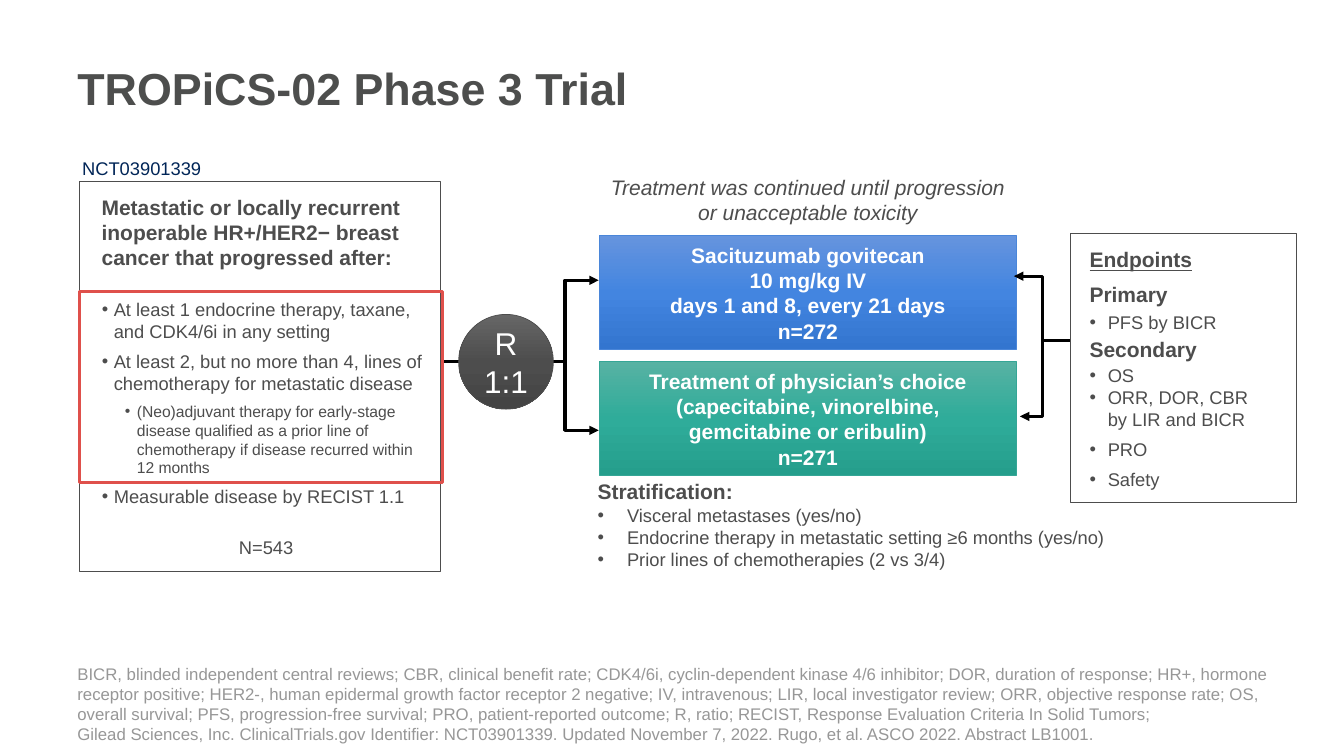
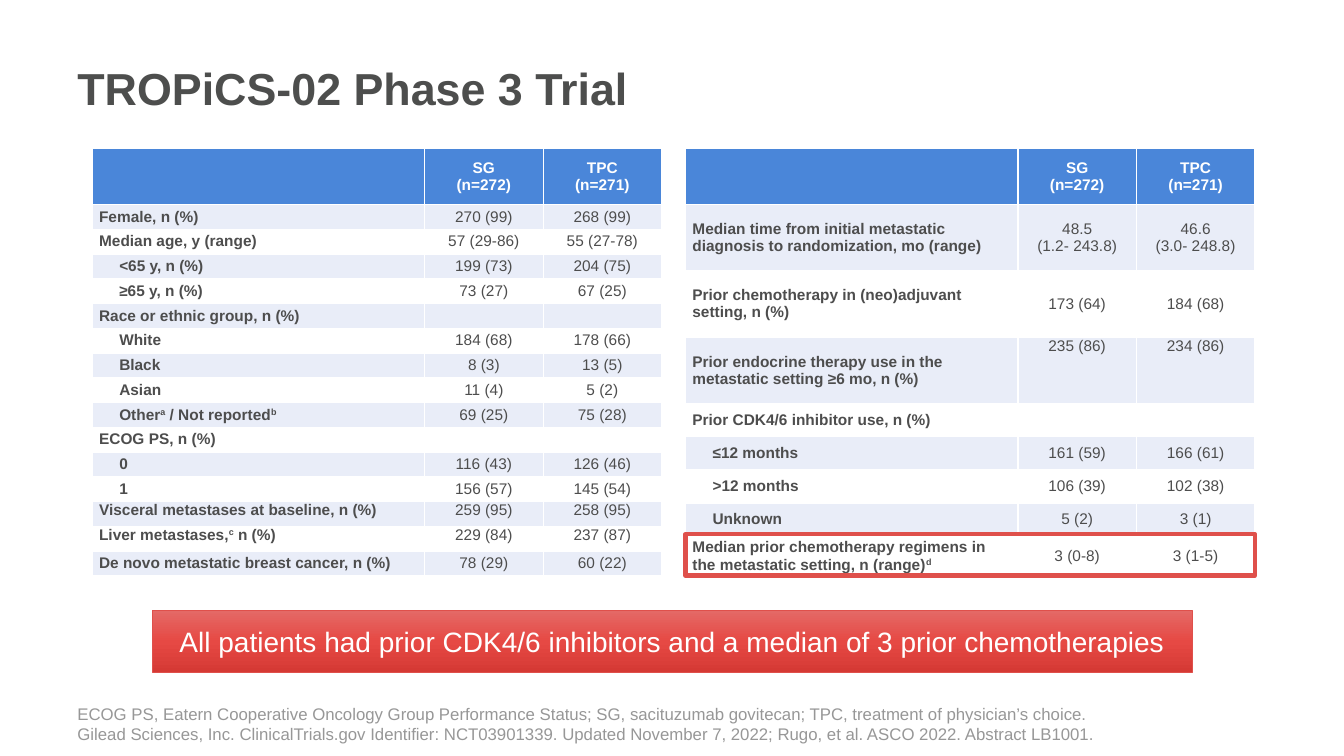
from collections import namedtuple
from copy import deepcopy
from dataclasses import dataclass

from lxml.etree import SubElement
from pptx import Presentation
from pptx.dml.color import RGBColor
from pptx.enum.shapes import MSO_CONNECTOR as Connector, MSO_SHAPE as Preset
from pptx.enum.text import MSO_ANCHOR as Anchor, PP_ALIGN as Align
from pptx.oxml.ns import qn
from pptx.util import Pt

COLORS = {
    "title": "4D4E4D", "text": "4D4D4D", "footer": "979797", "navy": "002557",
    "white": "FFFFFF", "black": "000000", "band": "E9EDF8",
    "blue": "4A86D9", "green": "35A696", "red": "DF504B",
}
GRADIENTS = {
    "blue": ("6594DE", "4385E0", "3375CF"),
    "green": ("57B2A3", "2FAC9A", "259E8C"),
    "red": ("E46966", "E64944", "D53934"),
    "text": ("666666", "4D4D4D", "444444"),
}
FONT = "Arial"
HEADING, BODY, SMALL, CELL = 15, 13.1, 11.2, 11
INSETS = (7.2, 3.6, 7.2, 3.6)
TITLE = "TROPiCS-02 Phase 3 Trial"

Box = namedtuple("Box", "x y w h")


@dataclass
class Para:
    """One paragraph; newlines break lines and ^ marks switch superscript on and off."""
    text: str
    size: float = BODY
    color: str = "text"
    bold: bool = False
    italic: bool = False
    underline: bool = False
    align: Align = Align.LEFT
    before: float = 0
    after: float = 0
    indent: float = 0
    hang: float = 0
    line_spacing: float = 1.0


@dataclass
class Row:
    label: str
    sg: str = ""
    tpc: str = ""
    indent: float = 0
    top_columns: tuple = ()
    height: float = 17.7


def rgb(name):
    return RGBColor.from_string(COLORS[name])


def points(box):
    return [Pt(length) for length in box]


def add_run(paragraph, text, para, superscript):
    run = paragraph.add_run()
    run.text = text
    font = run.font
    font.name, font.size = FONT, Pt(para.size)
    font.bold, font.italic, font.underline = para.bold, para.italic, para.underline
    font.color.rgb = rgb(para.color)
    if superscript:
        run._r.get_or_add_rPr().set("baseline", "30000")


def write_paragraph(paragraph, para):
    paragraph.alignment = para.align
    paragraph.space_before, paragraph.space_after = Pt(para.before), Pt(para.after)
    paragraph.line_spacing = para.line_spacing
    properties = paragraph._p.get_or_add_pPr()
    properties.set("marL", str(Pt(para.indent)))
    properties.set("indent", str(-Pt(para.hang)))
    if para.hang:
        SubElement(properties, qn("a:buFont"), typeface=FONT)
        SubElement(properties, qn("a:buChar"), char="•")
    for line_index, line in enumerate(para.text.split("\n")):
        if line_index:
            paragraph.add_line_break()
        for index, part in enumerate(line.split("^")):
            if part:
                add_run(paragraph, part, para, index % 2 == 1)
    if not para.text:
        SubElement(paragraph._p, qn("a:endParaRPr"), sz=str(int(para.size * 100)))


def write_text(shape, paras, anchor=Anchor.TOP, insets=INSETS):
    frame = shape.text_frame
    frame.word_wrap = True
    frame.vertical_anchor = anchor
    (frame.margin_left, frame.margin_top,
     frame.margin_right, frame.margin_bottom) = points(insets)
    for index, para in enumerate(paras):
        write_paragraph(frame.add_paragraph() if index else frame.paragraphs[0], para)


def add_text(slide, box, paras, anchor=Anchor.TOP):
    write_text(slide.shapes.add_textbox(*points(box)), paras, anchor)


def add_panel(slide, box, line, width, fill=None, preset=Preset.RECTANGLE):
    shape = slide.shapes.add_shape(preset, *points(box))
    shape.shadow.inherit = False
    shape.line.color.rgb = rgb(line)
    shape.line.width = Pt(width)
    if fill:
        shape.fill.solid()
        shape.fill.fore_color.rgb = rgb(fill)
    else:
        shape.fill.background()
    return shape


def add_glossy(slide, box, color, preset=Preset.RECTANGLE):
    """Outlined shape with a three-stop vertical gradient."""
    shape = add_panel(slide, box, color, 0.5, preset=preset)
    shape.fill.gradient()
    shape.fill.gradient_angle = 270
    stop_list = shape._element.spPr.find(qn("a:gradFill")).find(qn("a:gsLst"))
    stop_list.append(deepcopy(stop_list[-1]))
    for index, (stop, value) in enumerate(zip(shape.fill.gradient_stops, GRADIENTS[color])):
        stop.color.rgb = RGBColor.from_string(value)
        stop.position = index / 2
    return shape


def add_fork(slide, start, trunk, ends):
    """Elbow arrows from one start point that turn at the vertical line x = trunk."""
    for end in ends:
        connector = slide.shapes.add_connector(Connector.ELBOW, *points(start + end))
        connector.line.color.rgb = rgb("black")
        connector.line.width = Pt(2.25)
        properties = connector._element.spPr
        guides = properties.find(qn("a:prstGeom")).find(qn("a:avLst"))
        turn = round(100000 * (trunk - start[0]) / (end[0] - start[0]))
        SubElement(guides, qn("a:gd"), name="adj1", fmla=f"val {turn}")
        SubElement(properties.find(qn("a:ln")), qn("a:tailEnd"), type="triangle")
        SubElement(properties, qn("a:effectLst"))


def add_frame_slide(presentation, footer, footer_width):
    """Blank slide with the shared title and the footer notes."""
    slide = presentation.slides.add_slide(presentation.slide_layouts[6])
    add_text(slide, Box(48.2, 15.8, 846, 93.6),
             [Para(TITLE, 32, "title", bold=True)], Anchor.MIDDLE)
    add_text(slide, Box(48.2, 500.4, footer_width, 34.6),
             [Para(line, 12, "footer") for line in footer], Anchor.BOTTOM)
    return slide


def population_panel(slide, box):
    panel = add_panel(slide, box, "text", 1, "white")
    bullet = dict(before=5.6, indent=17.3, hang=8.6)
    write_text(panel, [
        Para("Metastatic or locally recurrent inoperable HR+/HER2− breast cancer "
             "that progressed after:", HEADING, bold=True, indent=8.6),
        Para("At least 1 endocrine therapy, taxane, and CDK4/6i in any setting",
             **{**bullet, "before": 20.1}),
        Para("At least 2, but no more than 4, lines of chemotherapy for metastatic disease",
             **bullet),
        Para("(Neo)adjuvant therapy for early-stage disease qualified as a prior line of "
             "chemotherapy if disease recurred within 12 months", SMALL,
             **{**bullet, "indent": 33.8}),
        Para("Measurable disease by RECIST 1.1", **bullet),
        Para("N=543", align=Align.CENTER, before=21.2, indent=8.6),
    ], Anchor.MIDDLE)


def treatment_arms(slide, box, gap):
    arms = {
        "blue": "Sacituzumab govitecan\n10 mg/kg IV\ndays 1 and 8, every 21 days\nn=272",
        "green": "Treatment of physician’s choice\n(capecitabine, vinorelbine,\n"
                 "gemcitabine or eribulin)\nn=271",
    }
    height = (box.h - gap) / 2
    for index, (color, text) in enumerate(arms.items()):
        arm = add_glossy(slide, Box(box.x, box.y + index * (height + gap), box.w, height), color)
        write_text(arm, [Para(text, HEADING, "white", bold=True, align=Align.CENTER)],
                   Anchor.MIDDLE)
    add_text(slide, Box(box.x, box.y - 47.5, box.w, 44), [
        Para("Treatment was continued until progression or unacceptable toxicity",
             HEADING, italic=True, align=Align.CENTER)])


def endpoints_panel(slide, box):
    heading = dict(size=HEADING, bold=True, before=1.5, after=1.5)
    bullet = dict(indent=13, hang=13)
    write_text(add_panel(slide, box, "text", 0.75, "white"), [
        Para("Endpoints", HEADING, bold=True, underline=True, after=5.6),
        Para("Primary", **heading),
        Para("PFS by BICR", before=1.3, after=1.3, **bullet),
        Para("Secondary", **heading),
        Para("OS", **bullet),
        *(Para(text, after=5.6, **bullet)
          for text in ("ORR, DOR, CBR\nby LIR and BICR", "PRO", "Safety")),
    ], Anchor.MIDDLE, (13.7, 3.6, 7.2, 3.6))


def stratification_list(slide, box):
    factors = ("Visceral metastases (yes/no)",
               "Endocrine therapy in metastatic setting ≥6 months (yes/no)",
               "Prior lines of chemotherapies (2 vs 3/4)")
    add_text(slide, box, [Para("Stratification:", HEADING, bold=True),
                          *(Para(factor, indent=21, hang=21) for factor in factors)])


def design_slide(presentation):
    slide = add_frame_slide(presentation, (
        "BICR, blinded independent central reviews; CBR, clinical benefit rate; CDK4/6i, "
        "cyclin-dependent kinase 4/6 inhibitor; DOR, duration of response; HR+, hormone "
        "receptor positive; HER2-, human epidermal growth factor receptor 2 negative; IV, "
        "intravenous; LIR, local investigator review; ORR, objective response rate; OS, "
        "overall survival; PFS, progression-free survival; PRO, patient-reported outcome; "
        "R, ratio; RECIST, Response Evaluation Criteria In Solid Tumors;",
        "Gilead Sciences, Inc. ClinicalTrials.gov Identifier: NCT03901339. Updated "
        "November 7, 2022. Rugo, et al. ASCO 2022. Abstract LB1001."), 877.7)
    population = Box(56.9, 129.6, 257.8, 278.6)
    population_panel(slide, population)
    add_text(slide, Box(17.3, 108.7, 167.8, 23),
             [Para("NCT03901339", color="navy", align=Align.CENTER)])
    add_fork(slide, (315.4, 258.5), 403.6, [(427.7, 200.2), (427.7, 307.4)])
    treatment_arms(slide, Box(428.4, 168.5, 297.4, 171.4), 8.6)
    add_fork(slide, (799.9, 243.4), 744.5, [(728.6, 297.4), (724.3, 197.3)])
    endpoints_panel(slide, Box(764.6, 167, 161.3, 192.2))
    stratification_list(slide, Box(419.8, 338.4, 444.2, 92.9))
    circle = add_glossy(slide, Box(327.6, 224.6, 67.7, 67.7), "text", Preset.OVAL)
    write_text(circle, [Para("R\n1:1", 22.5, "white", align=Align.CENTER)], Anchor.MIDDLE)
    add_panel(slide, Box(population.x, population.y + 78.5, 259.2, 136.8), "red", 2.25)


def style_cell(cell, para, fill, anchor):
    cell.margin_left = cell.margin_right = Pt(5)
    cell.margin_top = cell.margin_bottom = 0
    cell.vertical_anchor = anchor
    write_paragraph(cell.text_frame.paragraphs[0], para)
    properties = cell._tc.get_or_add_tcPr()
    for side in ("lnL", "lnR", "lnT", "lnB"):
        line = SubElement(properties, qn(f"a:{side}"), w=str(Pt(1)))
        color = SubElement(SubElement(line, qn("a:solidFill")), qn("a:srgbClr"))
        color.set("val", COLORS["white"])
    cell.fill.solid()
    cell.fill.fore_color.rgb = rgb(fill)


def baseline_table(slide, box, rows):
    rows = [Row("", "SG\n(n=272)", "TPC\n(n=271)", height=40), *rows]
    table = slide.shapes.add_table(len(rows), 3, *points(box)).table
    table.first_row = table.horz_banding = False
    for column, share in zip(table.columns, (0.584, 0.208, 0.208)):
        column.width = Pt(box.w * share)
    for index, row in enumerate(rows):
        table.rows[index].height = Pt(row.height)
        fill = ("band" if index % 2 else "white") if index else "blue"
        for column, text in enumerate((row.label, row.sg, row.tpc)):
            para = Para(text, CELL, "text" if index else "white",
                        bold=not index or not column,
                        align=Align.CENTER if column else Align.LEFT,
                        indent=0 if column else row.indent)
            anchor = Anchor.TOP if column in row.top_columns else Anchor.MIDDLE
            style_cell(table.cell(index, column), para, fill, anchor)


def characteristics_slide(presentation):
    slide = add_frame_slide(presentation, (
        "ECOG PS, Eatern Cooperative Oncology Group Performance Status; SG, sacituzumab "
        "govitecan; TPC, treatment of physician’s choice.",
        "Gilead Sciences, Inc. ClinicalTrials.gov Identifier: NCT03901339. Updated "
        "November 7, 2022; Rugo, et al. ASCO 2022. Abstract LB1001."), 846)
    sub, tall, medium = 14.4, 47.4, 23.7
    left = Box(65.8, 106, 406.8, 305.5)
    right = left._replace(x=489.6)
    baseline_table(slide, left, [
        Row("Female, n (%)", "270 (99)", "268 (99)"),
        Row("Median age, y (range)", "57 (29-86)", "55 (27-78)"),
        Row("<65 y, n (%)", "199 (73)", "204 (75)", sub),
        Row("≥65 y, n (%)", "73 (27)", "67 (25)", sub),
        Row("Race or ethnic group, n (%)"),
        Row("White", "184 (68)", "178 (66)", sub),
        Row("Black", "8 (3)", "13 (5)", sub),
        Row("Asian", "11 (4)", "5 (2)", sub),
        Row("Other^a^ / Not reported^b^", "69 (25)", "75 (28)", sub),
        Row("ECOG PS, n (%)"),
        Row("0", "116 (43)", "126 (46)", sub),
        Row("1", "156 (57)", "145 (54)", sub),
        Row("Visceral metastases at baseline, n (%)", "259 (95)", "258 (95)",
            top_columns=(0, 1, 2)),
        Row("Liver metastases,^c^ n (%)", "229 (84)", "237 (87)", top_columns=(0, 1, 2)),
        Row("De novo metastatic breast cancer, n (%)", "78 (29)", "60 (22)"),
    ])
    baseline_table(slide, right, [
        Row("Median time from initial metastatic diagnosis to randomization, mo (range)",
            "48.5\n(1.2- 243.8)", "46.6\n(3.0- 248.8)", height=tall),
        Row("Prior chemotherapy in (neo)adjuvant setting, n (%)",
            "173 (64)", "184 (68)", height=tall),
        Row("Prior endocrine therapy use in the metastatic setting ≥6 mo, n (%)",
            "235 (86)", "234 (86)", top_columns=(1, 2), height=tall),
        Row("Prior CDK4/6 inhibitor use, n (%)", height=medium),
        Row("≤12 months", "161 (59)", "166 (61)", sub, height=medium),
        Row(">12 months", "106 (39)", "102 (38)", sub, height=medium),
        Row("Unknown", "5 (2)", "3 (1)", sub, height=medium),
        Row("Median prior chemotherapy regimens in the metastatic setting, n (range)^d^",
            "3 (0-8)", "3 (1-5)", height=28.5),
    ])
    add_panel(slide, Box(right.x, right.y + right.h - 29.9, right.w, 29.5), "red", 3)
    banner = add_glossy(slide, Box(108.7, 436.3, 743, 43.9), "red")
    write_text(banner, [
        Para("All patients had prior CDK4/6 inhibitors and a median of 3 prior chemotherapies",
             20, "white", align=Align.CENTER, line_spacing=1.12)], insets=(0, 7.2, 0, 0))


def main():
    presentation = Presentation()
    presentation.slide_width, presentation.slide_height = Pt(960), Pt(540)
    design_slide(presentation)
    characteristics_slide(presentation)
    presentation.save("out.pptx")


if __name__ == "__main__":
    main()
